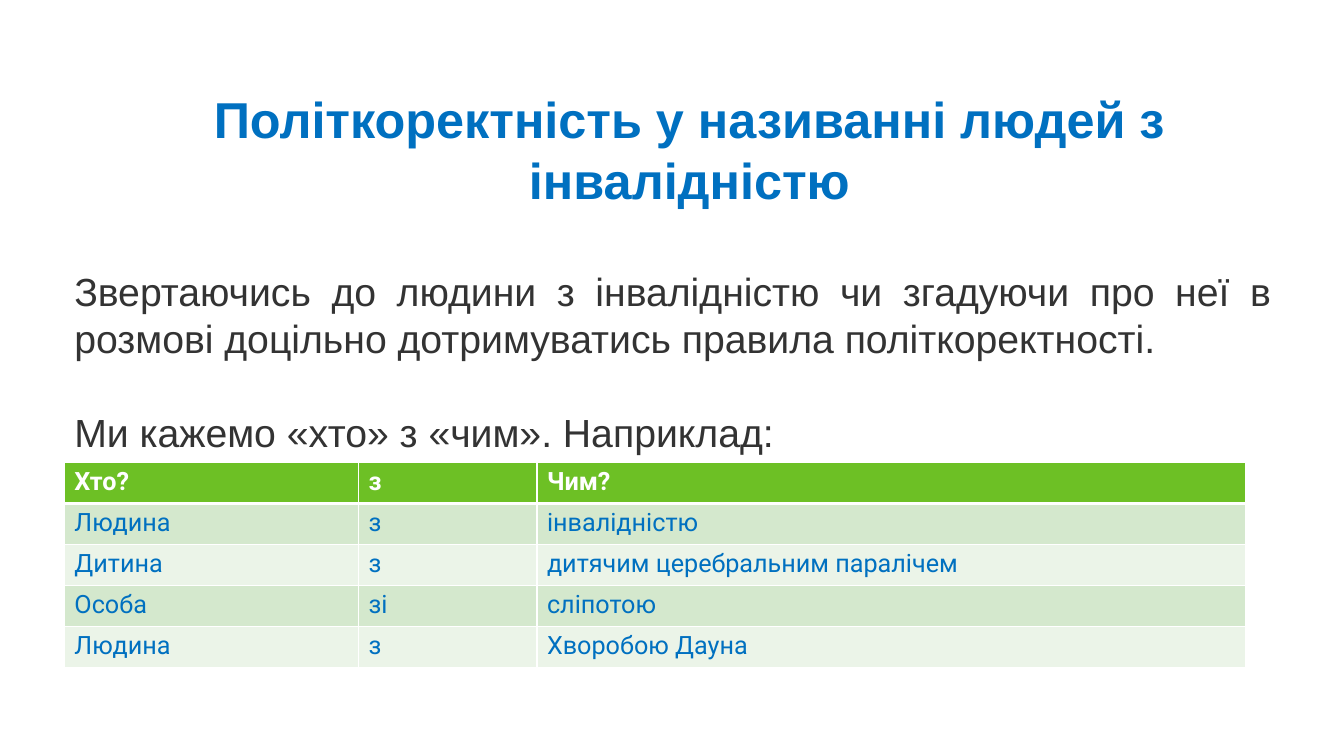
from lxml.etree import SubElement as Sub
from pptx import Presentation
from pptx.dml.color import RGBColor
from pptx.enum.text import MSO_AUTO_SIZE as Fit, PP_ALIGN as Align
from pptx.oxml.ns import qn
from pptx.util import Pt

BLUE, WHITE, GRAY, GREEN = "0070C0", "FFFFFF", "333333", "6DC025"
BANDS = ["D4E8CD", "EBF4E8"]
ROWS = [
    ("Хто?", "з", "Чим?"),
    ("Людина", "з", "інвалідністю"),
    ("Дитина", "з", "дитячим церебральним паралічем"),
    ("Особа", "зі", "сліпотою"),
    ("Людина", "з", "Хворобою Дауна"),
]


def color(code):
    return RGBColor.from_string(code)


def add_run(para, text, face, size, code, bold=False):
    run = para.add_run()
    run.text = text
    font = run.font
    font.name, font.size, font.bold = face, Pt(size), bold
    font.color.rgb = color(code)


def add_frame(slide, box):
    frame = slide.shapes.add_textbox(*map(Pt, box)).text_frame
    frame.word_wrap = True
    frame.auto_size = Fit.NONE
    return frame


def add_title(slide, box):
    para = add_frame(slide, box).paragraphs[0]
    para.alignment = Align.CENTER
    para.line_spacing = Pt(43.5)
    add_run(para, "Політкоректність у називанні людей з інвалідністю",
            "Arial", 36, BLUE, True)


def add_body(slide, box):
    """Place two justified paragraphs, with one line of room above each."""
    line = 33.7
    frame = add_frame(slide, box)
    frame.margin_top = Pt(3.6 + line)
    first, last = frame.paragraphs[0], frame.add_paragraph()
    last.space_before = Pt(line)
    for para, text in (
        (first, "Звертаючись до людини з інвалідністю чи згадуючи про неї в "
                "розмові доцільно дотримуватись правила політкоректності."),
        (last, "Ми кажемо «хто» з «чим». Наприклад:"),
    ):
        para.alignment = Align.JUSTIFY
        para.line_spacing = Pt(line)
        add_run(para, text, "Arial", 28, GRAY)


def set_edges(cell, widths):
    """Draw white cell borders; widths maps each side to points."""
    props = cell._tc.get_or_add_tcPr()
    for side, width in widths.items():
        edge = Sub(props, qn(f"a:ln{side}"), w=str(Pt(width)))
        fill = Sub(edge, qn("a:solidFill"))
        Sub(fill, qn("a:srgbClr"), val=WHITE)


def add_grid(slide, box):
    shares = [0.249, 0.151, 0.6]
    table = slide.shapes.add_table(
        len(ROWS), len(shares), *map(Pt, box)).table
    for col, share in zip(table.columns, shares):
        col.width = Pt(round(box[2] * share, 2))
    for i, texts in enumerate(ROWS):
        table.rows[i].height = Pt(box[3] / len(ROWS))
        head = i == 0
        for j, text in enumerate(texts):
            cell = table.cell(i, j)
            set_edges(cell, {"L": 1, "R": 1, "T": 3 if i == 1 else 1,
                             "B": 3 if head else 1})
            cell.fill.solid()
            cell.fill.fore_color.rgb = color(
                GREEN if head else BANDS[(i - 1) % 2])
            add_run(cell.text_frame.paragraphs[0], text, "Roboto", 18,
                    WHITE if head else BLUE, head)


def main():
    deck = Presentation()
    deck.slide_width, deck.slide_height = Pt(960), Pt(540)
    slide = deck.slides.add_slide(deck.slide_layouts[6])
    add_body(slide, (46, 153.4, 869, 177))
    add_title(slide, (108, 59, 769, 94.4))
    add_grid(slide, (46, 330.4, 844, 146.25))
    deck.save("out.pptx")


if __name__ == "__main__":
    main()
